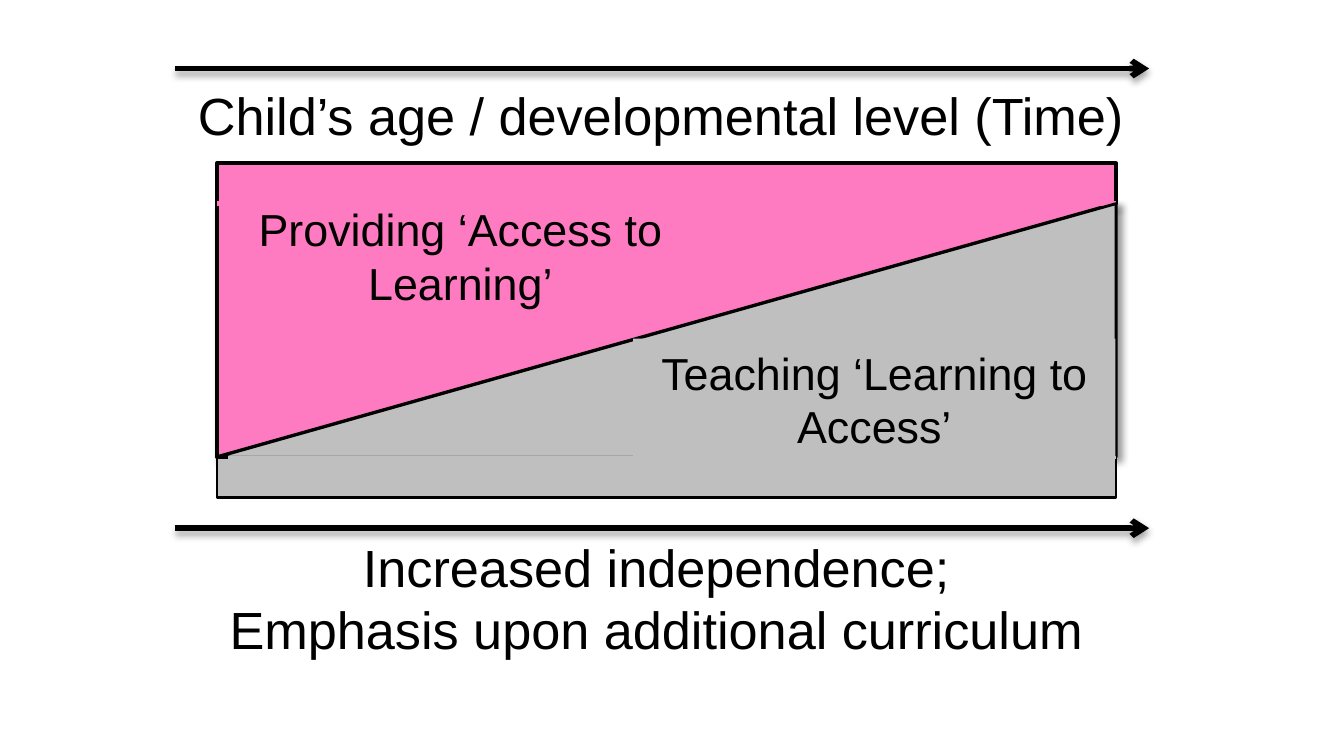
"""Build a slide on the shift from access to learning towards learning to access."""
import lxml.etree
import pptx
import pptx.dml.color
import pptx.enum.shapes
import pptx.enum.text
import pptx.oxml.ns
import pptx.util

COLORS = {"ink": "000000", "access": "FF7BC1", "teaching": "BFBFBF"}
SLIDE_WIDTH = 10
SLIDE_HEIGHT = SLIDE_WIDTH * 9 / 16
SHARES = {"left": 16.14, "width": 66.9, "top": 21.6, "band": 5.33, "slope": 33.55}
LEFT, WIDTH = (SLIDE_WIDTH * SHARES[key] / 100 for key in ("left", "width"))
TOP, BAND, SLOPE = (SLIDE_HEIGHT * SHARES[key] / 100 for key in ("top", "band", "slope"))
RIGHT = LEFT + WIDTH
SLOPE_TOP = TOP + BAND
SLOPE_BOTTOM = SLOPE_TOP + SLOPE
ARROW_SPAN = (1.3, 8.55)
ARROW_SHADOW = {"alpha": 35, "blur": 3.1, "dist": 1.8, "angle": 90}
WEDGE_SHADOW = {"alpha": 40, "blur": 4, "dist": 3, "angle": 45}

AXES = [
    {"y": 0.51, "box": (0.9, 0.57, 8.03, 0.57),
     "lines": ["Child’s age / developmental level (Time)"]},
    {"y": 3.93, "box": (1.38, 3.93, 7.11, 1.04),
     "lines": ["Increased independence; ", "Emphasis upon additional curriculum "]},
]
WEDGES = [
    {"color": "access", "label": "Providing ‘Access to Learning’",
     "box": (1.77, 1.45, 3.31, 0.91), "band_top": TOP,
     "apex": 0, "flip": True, "outline": 2,
     "seam": (LEFT, RIGHT, SLOPE_TOP), "seam_width": 2.25},
    {"color": "teaching", "label": "Teaching ‘Learning to Access’",
     "box": (4.71, 2.52, 3.59, 0.91), "band_top": SLOPE_BOTTOM,
     "apex": 1, "flip": False, "outline": 1.5,
     "seam": (RIGHT, LEFT + 0.08, SLOPE_BOTTOM), "seam_width": 1.5},
]


def rgb(name):
    return pptx.dml.color.RGBColor.from_string(COLORS[name])


def inches(lengths):
    return [pptx.util.Inches(length) for length in lengths]


def child(parent, tag, **attributes):
    return lxml.etree.SubElement(parent, pptx.oxml.ns.qn(tag), attributes)


def cast_shadow(effects, shadow):
    outer = child(effects, "a:outerShdw", blurRad=str(pptx.util.Pt(shadow["blur"])),
                  dist=str(pptx.util.Pt(shadow["dist"])),
                  dir=str(shadow["angle"] * 60000), rotWithShape="0")
    tone = child(outer, "a:srgbClr", val=COLORS["ink"])
    child(tone, "a:alpha", val=str(shadow["alpha"] * 1000))


def stroke(line, color, width):
    line.color.rgb = rgb(color)
    line.width = pptx.util.Pt(width)


def write(frame, lines, size):
    settings = {"word_wrap": True,
                "auto_size": pptx.enum.text.MSO_AUTO_SIZE.SHAPE_TO_FIT_TEXT,
                "vertical_anchor": pptx.enum.text.MSO_ANCHOR.TOP}
    for key, value in settings.items():
        setattr(frame, key, value)
    for index, words in enumerate(lines):
        paragraph = frame.add_paragraph() if index else frame.paragraphs[0]
        paragraph.alignment = pptx.enum.text.PP_ALIGN.CENTER
        run = paragraph.add_run()
        run.text = words
        for key, value in {"name": "Arial", "size": pptx.util.Pt(size)}.items():
            setattr(run.font, key, value)
        run.font.color.rgb = rgb("ink")


def add_line(shapes, start, end, y, color, width):
    connector = shapes.add_connector(pptx.enum.shapes.MSO_CONNECTOR.STRAIGHT,
                                     *inches((start, y, end, y)))
    stroke(connector.line, color, width)
    properties = connector._element.spPr
    return properties, child(properties, "a:effectLst")


def add_block(shapes, kind, box, color, outline=None):
    block = shapes.add_shape(kind, *inches(box))
    block.shadow.inherit = False
    block.fill.solid()
    block.fill.fore_color.rgb = rgb(color)
    if outline:
        stroke(block.line, "ink", outline)
    else:
        block.line.fill.background()
    return block


def add_axis(shapes, axis):
    properties, effects = add_line(shapes, *ARROW_SPAN, axis["y"], "ink", 3)
    child(properties.find(pptx.oxml.ns.qn("a:ln")), "a:tailEnd", type="arrow")
    cast_shadow(effects, ARROW_SHADOW)
    write(shapes.add_textbox(*inches(axis["box"])).text_frame, axis["lines"], 28)


def add_wedge(shapes, wedge):
    kinds = pptx.enum.shapes.MSO_SHAPE
    color, outline = wedge["color"], wedge["outline"]
    slope = add_block(shapes, kinds.ISOSCELES_TRIANGLE,
                      (LEFT, SLOPE_TOP, WIDTH, SLOPE), color, outline)
    slope.adjustments[0] = wedge["apex"]
    properties = slope._element.spPr
    if wedge["flip"]:
        properties.find(pptx.oxml.ns.qn("a:xfrm")).set("flipV", "1")
    cast_shadow(properties.find(pptx.oxml.ns.qn("a:effectLst")), WEDGE_SHADOW)
    label = add_block(shapes, kinds.RECTANGLE, wedge["box"], color)
    write(label.text_frame, [wedge["label"]], 24)
    add_block(shapes, kinds.RECTANGLE, (LEFT, wedge["band_top"], WIDTH, BAND), color, outline)
    add_line(shapes, *wedge["seam"], color, wedge["seam_width"])


def main():
    deck = pptx.Presentation()
    deck.slide_width, deck.slide_height = inches((SLIDE_WIDTH, SLIDE_HEIGHT))
    slide = deck.slides.add_slide(deck.slide_layouts[6])
    for axis in AXES:
        add_axis(slide.shapes, axis)
    for wedge in WEDGES:
        add_wedge(slide.shapes.add_group_shape().shapes, wedge)
    deck.save("out.pptx")


if __name__ == "__main__":
    main()
